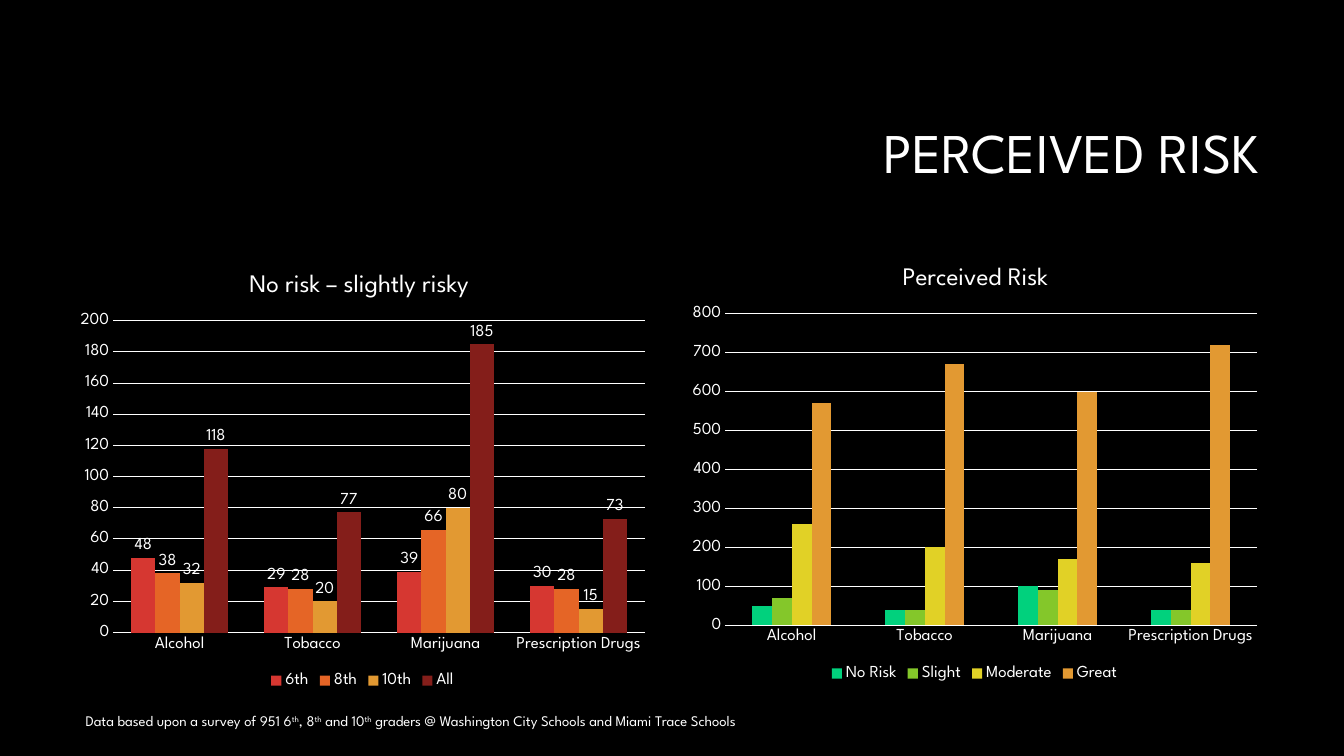
"""Build the Perceived Risk slide with two clustered column charts."""
from lxml.etree import SubElement
from pptx import Presentation
from pptx.chart.data import CategoryChartData
from pptx.dml.color import RGBColor
from pptx.enum.chart import XL_CHART_TYPE, XL_LABEL_POSITION, XL_LEGEND_POSITION, XL_TICK_MARK
from pptx.enum.text import MSO_ANCHOR, PP_ALIGN
from pptx.oxml.ns import qn
from pptx.util import Inches, Pt

BLACK = RGBColor(0x00, 0x00, 0x00)
WHITE = RGBColor(0xFF, 0xFF, 0xFF)
RED = RGBColor(0xD6, 0x37, 0x31)
ORANGE = RGBColor(0xE5, 0x65, 0x26)
AMBER = RGBColor(0xE2, 0x99, 0x32)
MAROON = RGBColor(0x84, 0x1E, 0x1A)
GREEN = RGBColor(0x01, 0xD1, 0x7D)
LIME = RGBColor(0x84, 0xC7, 0x2A)
YELLOW = RGBColor(0xE1, 0xD1, 0x26)

FONT = "League Spartan"
CATEGORIES = ["Alcohol", "Tobacco", "Marijuana", "Prescription Drugs"]
CHART_SIZE = (Inches(5.83), Inches(4.4))
CHARTS = [
    {"title": "No risk – slightly risky", "title_left": 0.3, "left": 0.68, "top": 2.47,
     "gap": 150, "maximum": 200, "step": 20, "labels": True, "baseline": False,
     "series": [("6th", (48, 29, 39, 30), RED), ("8th", (38, 28, 66, 28), ORANGE),
                ("10th", (32, 20, 80, 15), AMBER), ("All", (118, 77, 185, 73), MAROON)]},
    {"title": "Perceived Risk", "title_left": 0.37, "left": 6.75, "top": 2.4,
     "gap": 269, "maximum": 800, "step": 100, "labels": False, "baseline": True,
     "series": [("No Risk", (50, 40, 100, 40), GREEN), ("Slight", (70, 40, 90, 40), LIME),
                ("Moderate", (260, 200, 170, 160), YELLOW), ("Great", (570, 670, 600, 720), AMBER)]},
]


def format_font(font, size):
    """Apply the shared white typeface at the given point size."""
    for name, value in {"name": FONT, "size": Pt(size), "bold": False}.items():
        setattr(font, name, value)
    font.color.rgb = WHITE


def place_part(part, values):
    """Give a chart title or plot area a manual layout in shares of the chart."""
    layout = part.find(qn("c:layout"))
    if layout is None:
        layout = SubElement(part, qn("c:layout"))
        position = 1 if part.tag == qn("c:title") else 0
        part.insert(position, layout)
    manual = SubElement(layout, qn("c:manualLayout"))
    for name, value in values.items():
        SubElement(manual, qn(f"c:{name}")).set("val", str(value))


presentation = Presentation()
presentation.slide_width = Inches(13.33)
presentation.slide_height = Inches(7.5)
slide = presentation.slides.add_slide(presentation.slide_layouts[5])
slide.background.fill.solid()
slide.background.fill.fore_color.rgb = BLACK

title = slide.shapes.title
for name, value in {"left": 3.17, "top": 0.84, "width": 9.42, "height": 1.41}.items():
    setattr(title, name, Inches(value))
title.text_frame.text = "PERCEIVED RISK"
title.text_frame.vertical_anchor = MSO_ANCHOR.MIDDLE
paragraph = title.text_frame.paragraphs[0]
paragraph.alignment = PP_ALIGN.RIGHT
paragraph.line_spacing = 0.9
format_font(paragraph.runs[0].font, 40)

for settings in CHARTS:
    chart_data = CategoryChartData()
    chart_data.categories = CATEGORIES
    for name, values, color in settings["series"]:
        chart_data.add_series(name, values)
    chart = slide.shapes.add_chart(
        XL_CHART_TYPE.COLUMN_CLUSTERED, Inches(settings["left"]), Inches(settings["top"]),
        *CHART_SIZE, chart_data).chart
    format_font(chart.font, 10)

    chart.has_title = True
    chart.chart_title.include_in_layout = False
    chart.chart_title.text_frame.text = settings["title"]
    format_font(chart.chart_title.text_frame.paragraphs[0].runs[0].font, 18)
    place_part(chart.chart_title.format.fill and chart.chart_title.element,
               {"xMode": "edge", "yMode": "edge", "x": settings["title_left"], "y": 0.04})
    place_part(chart.element.chart.plotArea,
               {"layoutTarget": "inner", "xMode": "edge", "yMode": "edge",
                "x": 0.076, "y": 0.162, "w": 0.905, "h": 0.703})

    chart.has_legend = True
    chart.legend.position = XL_LEGEND_POSITION.BOTTOM
    chart.legend.include_in_layout = False
    format_font(chart.legend.font, 12)

    for axis in (chart.category_axis, chart.value_axis):
        axis.major_tick_mark = XL_TICK_MARK.NONE
        axis.minor_tick_mark = XL_TICK_MARK.NONE
        axis.format.line.fill.background()
        format_font(axis.tick_labels.font, 12)
    axis_values = {"minimum_scale": 0, "maximum_scale": settings["maximum"],
                   "major_unit": settings["step"], "has_major_gridlines": True}
    for name, value in axis_values.items():
        setattr(chart.value_axis, name, value)
    lines = [chart.value_axis.major_gridlines.format.line]
    if settings["baseline"]:
        lines.append(chart.category_axis.format.line)
    for line in lines:
        line.color.rgb = WHITE
        line.width = Pt(0.75)

    plot = chart.plots[0]
    plot.gap_width = settings["gap"]
    plot.overlap = 0
    plot.vary_by_categories = False
    for series, (name, values, color) in zip(plot.series, settings["series"]):
        series.format.fill.solid()
        series.format.fill.fore_color.rgb = color
        if settings["labels"]:
            series.data_labels.show_value = True
            series.data_labels.position = XL_LABEL_POSITION.OUTSIDE_END
            format_font(series.data_labels.font, 12)

note = slide.shapes.add_textbox(Inches(0.75), Inches(6.95), Inches(8.5), Inches(0.4))
note.text_frame.word_wrap = True
note.text_frame.vertical_anchor = MSO_ANCHOR.MIDDLE
paragraph = note.text_frame.paragraphs[0]
pieces = ["Data based upon a survey of 951 6", "th", ", 8", "th", " and 10", "th",
          " graders @ Washington City Schools and Miami Trace Schools"]
for piece in pieces:
    run = paragraph.add_run()
    run.text = piece
    format_font(run.font, 10.5)
    if piece == "th":
        run.font._element.set("baseline", "30000")

presentation.save("out.pptx")
